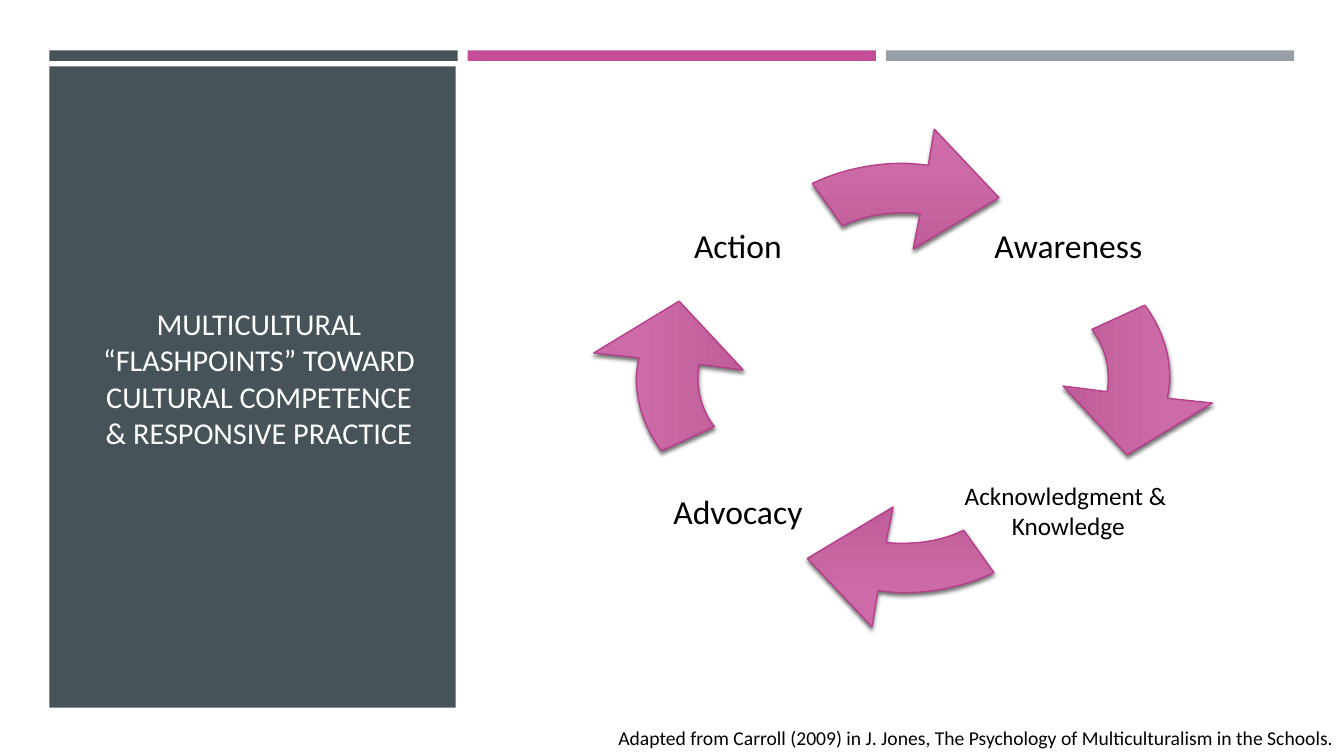
from dataclasses import dataclass

from lxml import etree
from pptx import Presentation
from pptx import util as u
from pptx.dml.color import RGBColor
from pptx.enum import shapes, text
from pptx.oxml.ns import qn

SLATE, MAGENTA, GREY = "465359", "C34D97", "969FA7"
CENTRE_X, CENTRE_Y = 645.1, 270
ARROW_WIDTH, ARROW_HEIGHT = 259.2, 208.1

Point = tuple[float, float]


@dataclass(frozen=True)
class Band:
    left: float
    top: float
    width: float
    height: float
    fill: str


@dataclass(frozen=True)
class Stage:
    lines: tuple[str, ...]
    side: int
    level: int
    size: float = 24


@dataclass(frozen=True)
class Arrow:
    across: float
    down: float
    width: float
    height: float
    rotation: float


BANDS = [
    Band(35.3 + 298.8 * i, 36, 291.6, 7.6, fill)
    for i, fill in enumerate((SLATE, MAGENTA, GREY))
] + [Band(35.3, 47.5, 290.2, 457.9, SLATE)]

STAGES = [
    Stage(("Awareness",), 1, -1),
    Stage(("Acknowledgment & ", "Knowledge"), 1, 1, 18),
    Stage(("Advocacy",), -1, 1),
    Stage(("Action",), -1, -1),
]

ARROWS = [
    Arrow(0, -49.3, ARROW_WIDTH, ARROW_HEIGHT, 0),
    Arrow(60.9, 0, ARROW_HEIGHT, ARROW_WIDTH, 90),
    Arrow(0, 49.3, ARROW_WIDTH, ARROW_HEIGHT, 180),
    Arrow(-60.9, 0, ARROW_HEIGHT, ARROW_WIDTH, 270),
]

OUTLINE: list[tuple[Point, ...]] = [
    ((141.8, 36),),
    ((137.5, 35.3), (133.9, 35.3), (129.6, 35.3)),
    ((114.5, 35.3), (99.4, 38.2), (86.4, 44.7)),
    ((64.8, 14.4),),
    ((84.2, 5.1), (106.6, 0), (129.6, 0)),
    ((135.4, 0), (141.8, 0.8), (147.6, 1.5)),
    ((151.9, -24.4),),
    ((198, 24.5),),
    ((136.8, 61.2),),
]


def colour(value: str) -> RGBColor:
    return RGBColor.from_string(value)


def apply(target, values: dict) -> None:
    for name, value in values.items():
        setattr(target, name, value)


def write(frame, lines: tuple[str, ...], size: float, ink: str, align, **frame_format) -> None:
    apply(frame, {"auto_size": text.MSO_AUTO_SIZE.NONE, **frame_format})
    frame.text = "\n".join(lines)
    for paragraph in frame.paragraphs:
        paragraph.alignment = align
        apply(paragraph.font, {"name": "Calibri", "size": u.Pt(size)})
        paragraph.font.color.rgb = colour(ink)


def draw_band(slide, band: Band) -> None:
    bar = slide.shapes.add_shape(
        shapes.MSO_SHAPE.RECTANGLE,
        u.Pt(band.left), u.Pt(band.top), u.Pt(band.width), u.Pt(band.height),
    )
    bar.shadow.inherit = False
    bar.fill.solid()
    bar.fill.fore_color.rgb = colour(band.fill)
    bar.line.fill.background()


def curve_outline(curved) -> None:
    route = next(curved._element.spPr.iter(qn("a:path")))
    for step in list(route):
        route.remove(step)
    route.set("w", str(u.Pt(ARROW_WIDTH)))
    route.set("h", str(u.Pt(ARROW_HEIGHT)))
    for index, points in enumerate(OUTLINE):
        kind = "moveTo" if index == 0 else "cubicBezTo" if len(points) == 3 else "lnTo"
        step = etree.SubElement(route, qn(f"a:{kind}"))
        for x, y in points:
            etree.SubElement(step, qn("a:pt"), x=str(u.Pt(x)), y=str(u.Pt(y)))
    etree.SubElement(route, qn("a:close"))


def add_shadow(raised) -> None:
    raised.shadow.inherit = False
    effects = raised._element.spPr.find(qn("a:effectLst"))
    shadow = etree.SubElement(
        effects, qn("a:outerShdw"),
        blurRad=str(u.Pt(3)), dist=str(u.Pt(2)), dir="5400000", rotWithShape="0",
    )
    black = etree.SubElement(shadow, qn("a:srgbClr"), val="000000")
    etree.SubElement(black, qn("a:alpha"), val="55000")


def draw_arrow(slide, arrow: Arrow) -> None:
    corners = [(u.Pt(points[-1][0]), u.Pt(points[-1][1])) for points in OUTLINE]
    builder = slide.shapes.build_freeform(*corners[0])
    builder.add_line_segments(corners[1:], close=True)
    sweep = builder.convert_to_shape()
    curve_outline(sweep)
    apply(sweep, {
        "left": u.Pt(CENTRE_X + arrow.across - arrow.width / 2),
        "top": u.Pt(CENTRE_Y + arrow.down - arrow.height / 2),
        "width": u.Pt(arrow.width),
        "height": u.Pt(arrow.height),
        "rotation": arrow.rotation,
    })
    sweep.fill.gradient()
    sweep.fill.gradient_angle = 270
    shades = (("CC6BA7", 0), ("A63F7F", 0.84))
    for stop, (shade, position) in zip(sweep.fill.gradient_stops, shades):
        stop.color.rgb = colour(shade)
        stop.position = position
    sweep.line.color.rgb = colour("B73E8A")
    sweep.line.width = u.Pt(1)
    add_shadow(sweep)


def draw_stage(slide, stage: Stage) -> None:
    width, height = 98, 78.5
    label = slide.shapes.add_textbox(
        u.Pt(CENTRE_X + 118 * stage.side - width / 2),
        u.Pt(CENTRE_Y + 94.7 * stage.level - height / 2),
        u.Pt(width), u.Pt(height),
    )
    margins = {f"margin_{edge}": 0 for edge in ("left", "top", "right", "bottom")}
    write(label.text_frame, stage.lines, stage.size, "000000", text.PP_ALIGN.CENTER,
          word_wrap=False, vertical_anchor=text.MSO_ANCHOR.MIDDLE, **margins)


def main() -> None:
    deck = Presentation()
    apply(deck, {"slide_width": u.Pt(960), "slide_height": u.Pt(540)})
    slide = deck.slides.add_slide(deck.slide_layouts[5])

    for band in BANDS:
        draw_band(slide, band)

    title = slide.shapes.title
    slide.shapes._spTree.append(title._element)
    apply(title, {"left": u.Pt(65.5), "top": u.Pt(202.3),
                  "width": u.Pt(239), "height": u.Pt(135.4)})
    write(title.text_frame,
          ("MULTICULTURAL “FLASHPOINTS” TOWARD CULTURAL COMPETENCE & RESPONSIVE PRACTICE",),
          21.6, "FFFFFF", text.PP_ALIGN.CENTER,
          word_wrap=True, vertical_anchor=text.MSO_ANCHOR.MIDDLE)

    for arrow in ARROWS:
        draw_arrow(slide, arrow)

    for stage in STAGES:
        draw_stage(slide, stage)

    citation = slide.shapes.add_textbox(u.Pt(416), u.Pt(514.8), u.Pt(544), u.Pt(24.2))
    write(citation.text_frame,
          ("Adapted from Carroll (2009) in J. Jones, The Psychology of Multiculturalism in the Schools.",),
          14, "000000", text.PP_ALIGN.RIGHT, word_wrap=True)

    deck.save("out.pptx")


if __name__ == "__main__":
    main()
